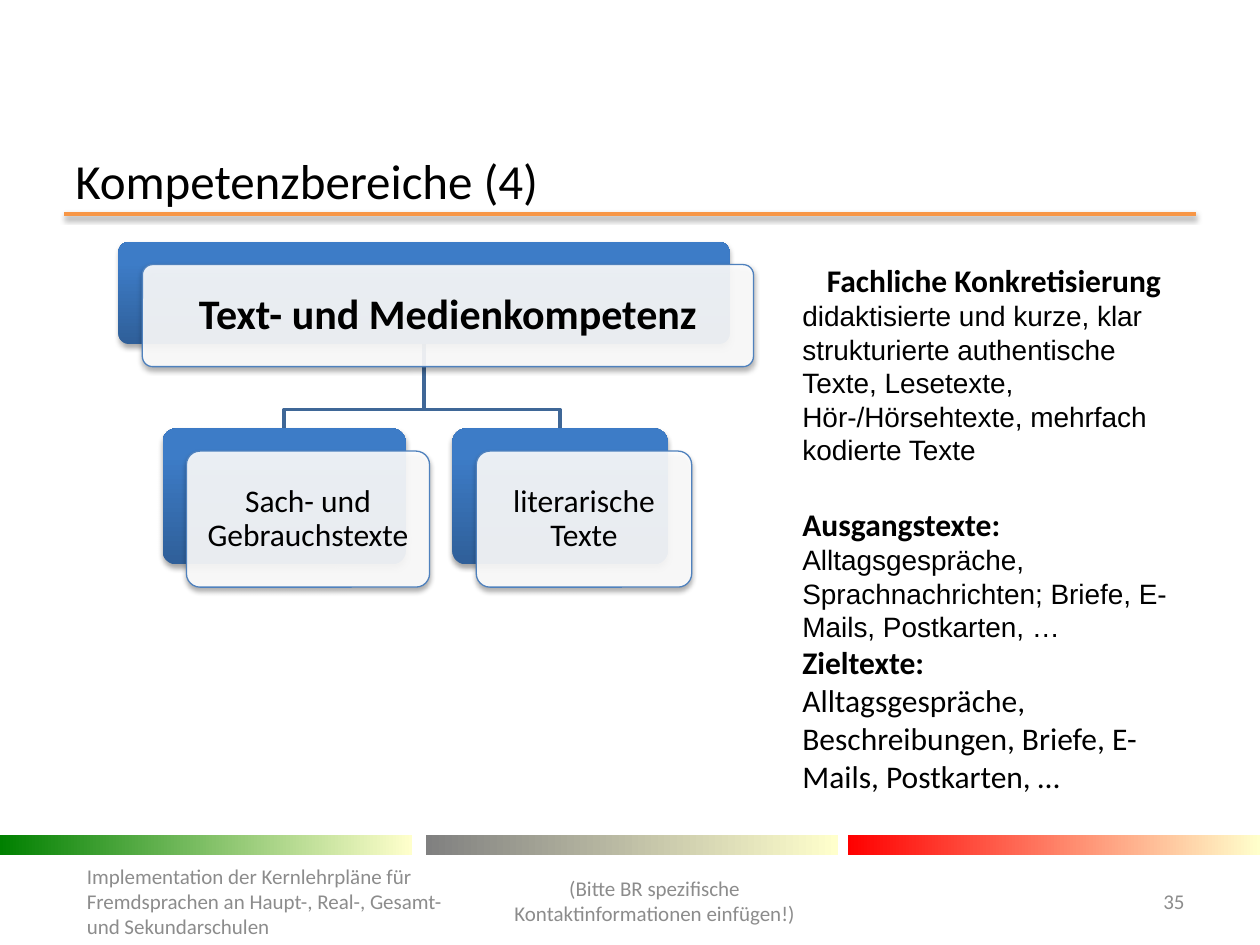
from lxml import etree
from pptx import Presentation
from pptx import util as u
from pptx.dml.color import RGBColor
from pptx.enum import shapes, text
from pptx.oxml.ns import qn

BLACK, GREY, CREAM = "000000", "8C8C8C", "FFFFCC"
LEFT, CENTER, RIGHT = text.PP_ALIGN.LEFT, text.PP_ALIGN.CENTER, text.PP_ALIGN.RIGHT
TOP, MIDDLE = text.MSO_ANCHOR.TOP, text.MSO_ANCHOR.MIDDLE


def color(hex_code):
    return RGBColor.from_string(hex_code)


def inches(*lengths):
    return [u.Inches(length) for length in lengths]


def add_alpha(color_parent, percent):
    """Set the opacity of the RGB colour held by an XML element."""
    rgb = color_parent.find(qn("a:srgbClr"))
    etree.SubElement(rgb, qn("a:alpha"), val=str(percent * 1000))


def add_shadow(effects, opacity, distance):
    """Add a soft black shadow straight below; distance in points."""
    shadow = etree.SubElement(
        effects, qn("a:outerShdw"), blurRad=str(u.Pt(3.1)),
        dist=str(u.Pt(distance)), dir="5400000", rotWithShape="0")
    etree.SubElement(shadow, qn("a:srgbClr"), val=BLACK)
    add_alpha(shadow, opacity)


class SlideBuilder:
    font = "Calibri"
    accent, tree_line, card_border = "F79646", "3F6797", "4F81BD"
    card_dark, card_light = "2F5F99", "3D7CC7"
    card_offset = (0.19, 0.18)

    def __init__(self, slide):
        self.shapes = slide.shapes

    def rule(self, left, right, y):
        line = self.shapes.add_connector(
            shapes.MSO_CONNECTOR.STRAIGHT, *inches(left, y, right, y))
        line.line.color.rgb = color(self.accent)
        line.line.width = u.Pt(2)
        effects = etree.SubElement(line._element.spPr, qn("a:effectLst"))
        add_shadow(effects, 38, 1.6)

    def box(self, kind, bounds):
        box = self.shapes.add_shape(kind, *inches(*bounds))
        box.shadow.inherit = False
        box.line.fill.background()
        return box

    def gradient(self, box, start, end, angle=0, end_position=1):
        box.fill.gradient()
        box.fill.gradient_angle = angle
        first, last = box.fill.gradient_stops
        first.color.rgb, last.color.rgb = color(start), color(end)
        first.position, last.position = 0, end_position

    def bar(self, left, start, end):
        bar = self.box(shapes.MSO_SHAPE.RECTANGLE, (left, 6.63, 3.27, 0.16))
        self.gradient(bar, start, end)

    def branch(self, start, end, bend_y):
        """Draw a line down, across at bend_y and down again."""
        points = [(start[0], bend_y), (end[0], bend_y), end]
        builder = self.shapes.build_freeform(*inches(*start))
        builder.add_line_segments([inches(*p) for p in points], close=False)
        branch = builder.convert_to_shape()
        branch.shadow.inherit = False
        branch.fill.background()
        branch.line.color.rgb = color(self.tree_line)
        branch.line.width = u.Pt(2)

    def card(self, bounds, label, size, margin, bold=False):
        """Draw a blue plate with a translucent label plate in front."""
        left, top, width, height = bounds
        dx, dy = self.card_offset
        front_bounds = (left + dx, top + dy, width, height)
        back, front = [self.box(shapes.MSO_SHAPE.ROUNDED_RECTANGLE, b)
                       for b in (bounds, front_bounds)]
        for plate in (back, front):
            plate.adjustments[0] = 0.1
            add_shadow(plate._element.spPr.find(qn("a:effectLst")), 35, 1.8)
        self.gradient(back, self.card_dark, self.card_light, 90, 0.8)

        front.fill.solid()
        front.fill.fore_color.rgb = color("FFFFFF")
        add_alpha(front._element.spPr.find(qn("a:solidFill")), 90)
        front.line.color.rgb = color(self.card_border)
        front.line.width = u.Pt(0.75)
        frame = front.text_frame
        frame.margin_left = frame.margin_right = u.Inches(margin)
        frame.margin_top = frame.margin_bottom = u.Inches(margin)
        frame.word_wrap = True
        frame.vertical_anchor = MIDDLE
        paragraph = frame.paragraphs[0]
        paragraph.line_spacing = 0.9
        self.add_runs(paragraph, [(label, size, bold, self.font)], CENTER)

    def add_runs(self, paragraph, runs, align=LEFT, ink=BLACK):
        paragraph.alignment = align
        for words, size, bold, font in runs:
            run = paragraph.add_run()
            run.text = words
            run.font.size = u.Pt(size)
            run.font.bold = bold
            run.font.name = font
            run.font.color.rgb = color(ink)

    def text_frame(self, bounds, anchor):
        frame = self.shapes.add_textbox(*inches(*bounds)).text_frame
        frame.word_wrap = True
        frame.vertical_anchor = anchor
        return frame

    def label(self, bounds, words, size=12, align=LEFT, ink=GREY):
        frame = self.text_frame(bounds, MIDDLE)
        self.add_runs(frame.paragraphs[0], [(words, size, False, self.font)], align, ink)

    def article(self, bounds, paragraphs):
        """Add paragraphs given as (runs, alignment, points before)."""
        frame = self.text_frame(bounds, TOP)
        for i, (runs, align, before) in enumerate(paragraphs):
            paragraph = frame.add_paragraph() if i else frame.paragraphs[0]
            if before:
                paragraph.space_before = u.Pt(before)
            self.add_runs(paragraph, runs, align)


def heading(words):
    return words, 18, True, "Calibri"


def detail(words):
    return words, 16, False, "Arial"


def main():
    deck = Presentation()
    deck.slide_width, deck.slide_height = inches(10, 7.5)
    page = SlideBuilder(deck.slides.add_slide(deck.slide_layouts[6]))

    page.rule(0.51, 9.49, 1.7)
    for left, start in ((0, "008000"), (3.38, "808080"), (6.73, "FF0000")):
        page.bar(left, start, CREAM)
    page.label((0.5, 1.23, 9, 0.39), "Kompetenzbereiche (4)", 28, ink=BLACK)

    root = (0.94, 1.92, 4.85, 0.81)
    text_types = [((1.29, 3.4, 1.93, 1.08), "Sach- und Gebrauchstexte"),
                  ((3.59, 3.4, 1.71, 1.08), "literarische Texte")]
    root_bottom = (root[0] + root[2] / 2, root[1] + root[3])
    for (left, top, width, _), _ in text_types:
        page.branch(root_bottom, (left + width / 2, top), 3.25)
    page.card(root, "Text- und Medienkompetenz", 24, 0.1, bold=True)
    for bounds, name in text_types:
        page.card(bounds, name, 18, 0.07)

    page.article((6.27, 2.02, 3.24, 4.64), [
        ([heading("Fachliche Konkretisierung")], CENTER, 0),
        ([detail("didaktisierte und kurze, klar strukturierte authentische Texte, "
                 "Lesetexte, Hör-/Hörsehtexte, mehrfach kodierte Texte")], LEFT, 0),
        ([heading("Ausgangstexte: "),
          detail("Alltagsgespräche, Sprachnachrichten; Briefe, E-Mails, "
                 "Postkarten, …")], LEFT, 22),
        ([heading("Zieltexte:")], LEFT, 0),
        ([("Alltagsgespräche, Beschreibungen, Briefe, E-Mails, Postkarten, …",
           18, False, "Calibri")], LEFT, 0),
    ])

    page.label((0.59, 6.81, 3.15, 0.68),
               "Implementation der Kernlehrpläne für Fremdsprachen an Haupt-, "
               "Real-, Gesamt- und Sekundarschulen")
    page.label((3.74, 6.79, 2.91, 0.71),
               "(Bitte BR spezifische Kontaktinformationen einfügen!)", align=CENTER)
    page.label((8.86, 6.95, 0.64, 0.4), "35", align=RIGHT)
    deck.save("out.pptx")


if __name__ == "__main__":
    main()
